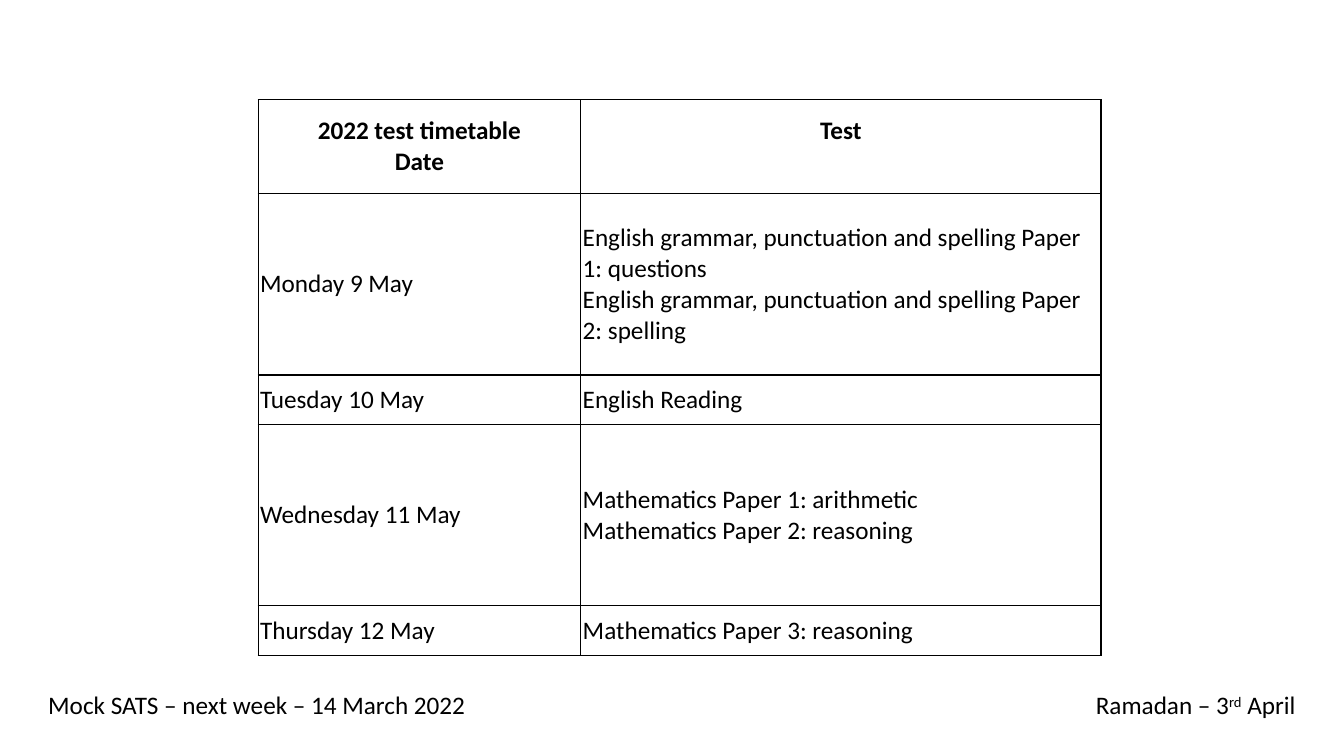
from lxml.etree import SubElement
from pptx import Presentation
from pptx.dml.color import RGBColor
from pptx.enum.text import MSO_ANCHOR as Anchor, PP_ALIGN as Align
from pptx.oxml.ns import qn
from pptx.util import Inches, Pt

BLACK = RGBColor(0x00, 0x00, 0x00)
CELL_MARGIN = 0.02
LINE_HEIGHT = 0.31


def add_text(paragraph, text, bold=False, align=Align.LEFT, baseline=0):
    paragraph.alignment = align
    run = paragraph.add_run()
    run.text = text
    run.font.name = "Calibri"
    run.font.size = Pt(18)
    run.font.bold = bold
    run.font.color.rgb = BLACK
    if baseline:
        run._r.get_or_add_rPr().set("baseline", str(baseline * 1000))


def add_borders(cell):
    properties = cell._tc.get_or_add_tcPr()
    for side in ("lnL", "lnR", "lnT", "lnB"):
        line = SubElement(properties, qn(f"a:{side}"), w=str(Pt(1)))
        fill = SubElement(line, qn("a:solidFill"))
        SubElement(fill, qn("a:srgbClr"), val=str(BLACK))


presentation = Presentation()
presentation.slide_width = Inches(13.33)
presentation.slide_height = Inches(7.5)
slide = presentation.slides.add_slide(presentation.slide_layouts[6])

# Test timetable: each cell is a list of paragraphs
timetable = [
    (["2022 test timetable", "Date"], ["Test"]),
    (["Monday 9 May"],
     ["English grammar, punctuation and spelling Paper 1: questions",
      "English grammar, punctuation and spelling Paper 2: spelling"]),
    (["Tuesday 10 May"], ["English Reading"]),
    (["Wednesday 11 May"],
     ["Mathematics Paper 1: arithmetic", "Mathematics Paper 2: reasoning"]),
    (["Thursday 12 May"], ["Mathematics Paper 3: reasoning"]),
]
column_widths = [3.2, 5.16]
row_heights = [0.93, 1.8, 0.49, 1.8, 0.49]

table = slide.shapes.add_table(
    len(row_heights), len(column_widths), Inches(2.56), Inches(0.99),
    Inches(sum(column_widths)), Inches(sum(row_heights))).table
table.first_row = False
table.horz_banding = False
for column, width in zip(table.columns, column_widths):
    column.width = Inches(width)
for row, height in zip(table.rows, row_heights):
    row.height = Inches(height)

for row_index, row_texts in enumerate(timetable):
    is_header = row_index == 0
    for column_index, lines in enumerate(row_texts):
        cell = table.cell(row_index, column_index)
        cell.vertical_anchor = Anchor.MIDDLE
        cell.margin_left = cell.margin_right = Inches(CELL_MARGIN)
        cell.margin_top = cell.margin_bottom = Inches(CELL_MARGIN)
        add_borders(cell)
        cell.fill.background()
        for line_index, line in enumerate(lines):
            frame = cell.text_frame
            paragraph = frame.add_paragraph() if line_index else frame.paragraphs[0]
            add_text(paragraph, line, bold=is_header,
                     align=Align.CENTER if is_header else Align.LEFT)

# Keep "Test" level with the first line of the other heading
table.cell(0, 1).margin_bottom = Inches(CELL_MARGIN + LINE_HEIGHT)

# Reminders below the table: left, width, height, (text, baseline) runs
reminders = [
    (10.77, 2.42, 0.4, [("Ramadan – 3", 0), ("rd", 30), (" April", 0)]),
    (0.38, 5.9, 0.71, [("Mock SATS – next week – 14 March 2022", 0)]),
]
for left, width, height, runs in reminders:
    text_box = slide.shapes.add_textbox(
        Inches(left), Inches(6.79), Inches(width), Inches(height))
    text_box.text_frame.word_wrap = True
    for text, baseline in runs:
        add_text(text_box.text_frame.paragraphs[0], text, baseline=baseline)

presentation.save("out.pptx")
